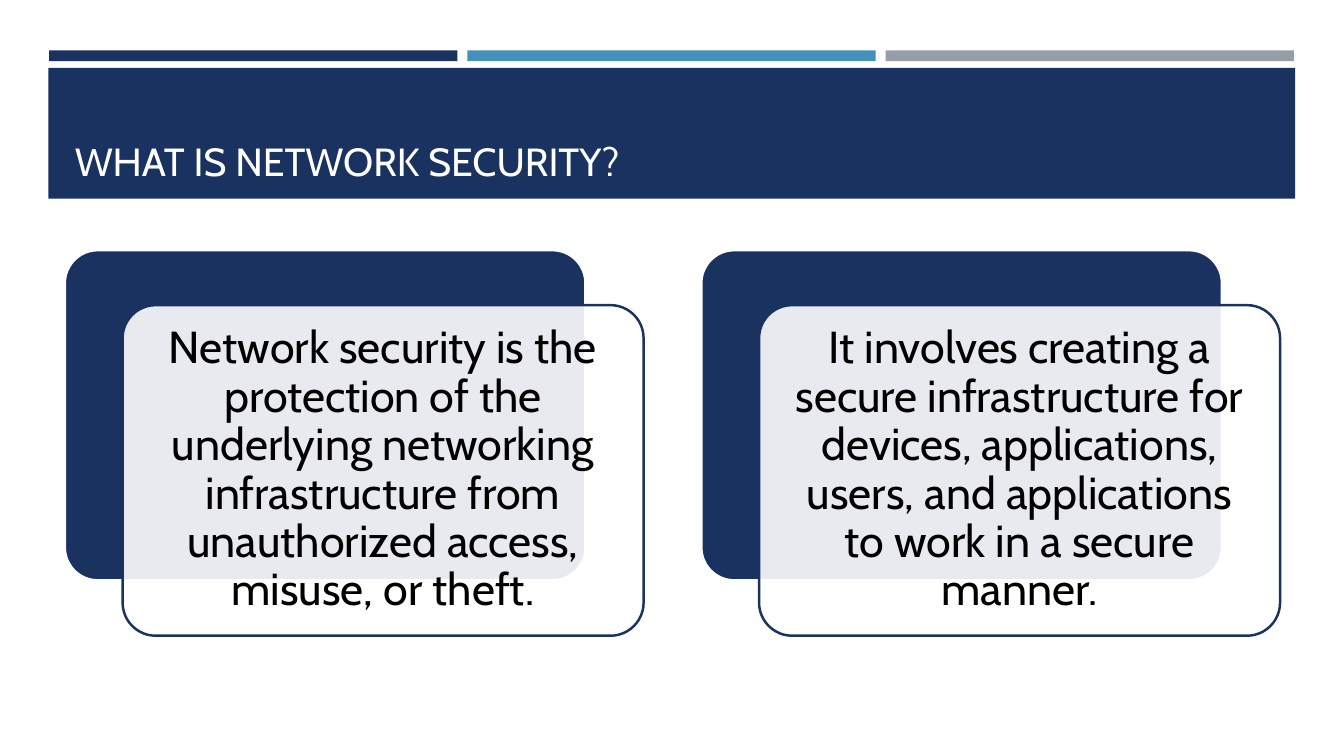
from lxml import etree
from pptx import Presentation
from pptx.dml.color import RGBColor
from pptx.enum import shapes, text
from pptx.oxml.ns import qn
from pptx.util import Cm, Pt

FONT = "Cabin"
NAVY, BLUE, GREY = "1A3260", "4590B8", "969FA7"
WHITE, BLACK = "FFFFFF", "000000"
CARDS = [
    "Network security is the protection of the underlying networking "
    "infrastructure from unauthorized access, misuse, or theft.",
    "It involves creating a secure infrastructure for devices, applications, "
    "users, and applications to work in a secure manner.",
]


def paint(target, color):
    """Give a fill or a line a solid colour."""
    target.solid()
    target.fore_color.rgb = RGBColor.from_string(color)


def write(shape, words, size, color, align, anchor):
    frame = shape.text_frame
    frame.text = words
    frame.word_wrap = True
    frame.auto_size = text.MSO_AUTO_SIZE.NONE
    frame.vertical_anchor = anchor
    para = frame.paragraphs[0]
    para.alignment = align
    para.line_spacing = 0.9
    font = para.runs[0].font
    font.name, font.size = FONT, Pt(size)
    font.color.rgb = RGBColor.from_string(color)
    return frame


def block(slide, kind, box, fill, line=None, width=0):
    shape = slide.shapes.add_shape(kind, *[Cm(n) for n in box])
    shape.shadow.inherit = False
    paint(shape.fill, fill)
    if line:
        paint(shape.line.fill, line)
        shape.line.width = Pt(width)
    else:
        shape.line.fill.background()
    return shape


def bar(slide, box, fill):
    return block(slide, shapes.MSO_SHAPE.RECTANGLE, box, fill)


def panel(slide, left, top, fill, line, width):
    box = (left, top, 13.13, 8.33)
    shape = block(slide, shapes.MSO_SHAPE.ROUNDED_RECTANGLE, box, fill, line, width)
    shape.adjustments[0] = 0.1
    return shape


def fade(shape, percent):
    """Set the opacity of a solid fill."""
    color = shape.fill._xPr.find(qn("a:solidFill"))[0]
    etree.SubElement(color, qn("a:alpha")).set("val", str(percent * 1000))


def card(slide, left, top, words):
    panel(slide, left, top, NAVY, WHITE, 2)
    front = panel(slide, left + 1.46, top + 1.39, WHITE, NAVY, 1.75)
    fade(front, 90)
    frame = write(front, words, 32, BLACK, text.PP_ALIGN.CENTER, text.MSO_ANCHOR.MIDDLE)
    frame.margin_left = frame.margin_right = Cm(0.34)
    frame.margin_top = frame.margin_bottom = Cm(0.34)


def head(slide, words):
    title = slide.shapes.title
    title.left, title.top = Cm(1.63), Cm(1.96)
    title.width, title.height = Cm(30.63), Cm(2.82)
    write(title, words, 28, WHITE, text.PP_ALIGN.LEFT, text.MSO_ANCHOR.BOTTOM)
    # Bring the title in front of its band
    slide.shapes._spTree.append(title._element)


def main():
    deck = Presentation()
    deck.slide_width, deck.slide_height = Cm(33.87), Cm(19.05)
    slide = deck.slides.add_slide(deck.slide_layouts[5])

    # Three-colour strip
    for i, color in enumerate((NAVY, BLUE, GREY)):
        bar(slide, (1.24 + i * 10.54, 1.27, 10.29, 0.27), color)

    # Title band
    bar(slide, (1.22, 1.71, 31.42, 3.3), NAVY)
    head(slide, "WHAT IS NETWORK SECURITY?")

    # Text cards
    for i, words in enumerate(CARDS):
        card(slide, 1.63 + i * 16.04, 6.3, words)

    deck.save("out.pptx")


if __name__ == "__main__":
    main()
